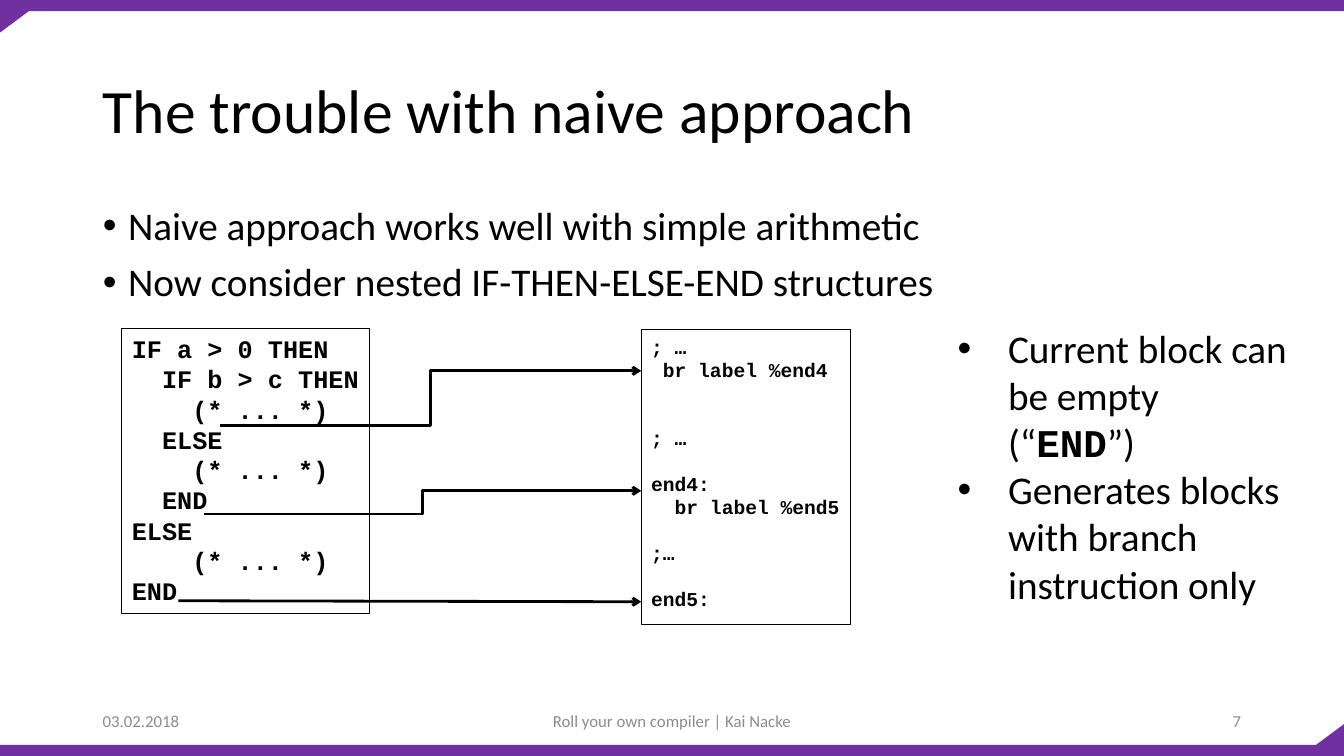
from lxml.etree import SubElement
from pptx import Presentation
from pptx.dml.color import RGBColor
from pptx.enum.shapes import MSO_CONNECTOR as CONN, MSO_SHAPE as SHAPE
from pptx.enum.text import MSO_ANCHOR as ANCHOR, MSO_AUTO_SIZE as AUTOSIZE, PP_ALIGN as ALIGN
from pptx.oxml.ns import qn
from pptx.util import Inches, Pt

TITLE = "The trouble with naive approach"
POINTS = ["Naive approach works well with simple arithmetic",
          "Now consider nested IF-THEN-ELSE-END structures"]
FINDINGS = [[("Current block can be empty (“", False), ("END", True), ("”)", False)],
            [("Generates blocks with branch instruction only", False)]]
FOOTER = ["03.02.2018", "Roll your own compiler | Kai Nacke", "7"]
# Code lines: text, indent in characters, empty lines above
SOURCE = [("IF a > 0 THEN", 0, 0), ("IF b > c THEN", 2, 0), ("(* ... *)", 4, 0),
          ("ELSE", 2, 0), ("(* ... *)", 4, 0), ("END", 2, 0),
          ("ELSE", 0, 0), ("(* ... *)", 4, 0), ("END", 0, 0)]
OUTPUT = [("; …", 0, 0), ("br label %end4", 1, 0), ("; …", 0, 2), ("end4:", 0, 1),
          ("br label %end5", 2, 0), (";…", 0, 1), ("end5:", 0, 1)]

WIDTH, HEIGHT = 13.33, 7.5
MARGIN = 0.92
CONTENT = WIDTH - 2 * MARGIN
BAR = 0.11
WEDGE = (0.54, 0.26)
OUTPUT_LEFT = 6.36
# Arrows: kind, start x, start y, end y; all end at the output box
ARROWS = [(CONN.ELBOW, 2.18, 4.22, 3.68), (CONN.ELBOW, 2.02, 5.1, 4.87),
          (CONN.STRAIGHT, 1.77, 5.96, 5.97)]
PURPLE, BLACK, GREY = "7030A0", "000000", "8C8C8C"
SANS, MONO = "Calibri", "Courier New"
MONO_ADVANCE, MONO_LINE = 0.6, 1.133  # character width and line height per point


def color(value):
    return RGBColor.from_string(value)


def box(*lengths):
    return [Inches(n) for n in lengths]


def write(p, text, size, font=SANS, fill=BLACK, bold=False):
    r = p.add_run()
    r.text = text
    r.font.size, r.font.name, r.font.bold = Pt(size), font, bold
    r.font.color.rgb = color(fill)


def paragraphs(tf, items):
    """Yield each item with its paragraph, starting with the existing one."""
    for i, item in enumerate(items):
        yield (tf.add_paragraph() if i else tf.paragraphs[0]), item


def indent(p, left, first=0.0, bullet=None):
    pPr = p._p.get_or_add_pPr()
    pPr.set("marL", str(Inches(left)))
    pPr.set("indent", str(Inches(first)))
    if bullet:
        SubElement(pPr, qn("a:buFont")).set("typeface", "Arial")
        SubElement(pPr, qn("a:buChar")).set("char", bullet)


def frame(sp, anchor=ANCHOR.TOP):
    tf = sp.text_frame
    tf.word_wrap, tf.auto_size, tf.vertical_anchor = True, AUTOSIZE.NONE, anchor
    return tf


def place(sp, *lengths):
    sp.left, sp.top, sp.width, sp.height = box(*lengths)


def purple_block(slide, *lengths, rotation=0):
    sp = slide.shapes.add_shape(SHAPE.RECTANGLE, *box(*lengths))
    sp.shadow.inherit = False
    sp.fill.solid()
    sp.fill.fore_color.rgb = color(PURPLE)
    sp.line.fill.background()
    sp.rotation = rotation


def code_box(slide, lines, size, *lengths):
    sp = slide.shapes.add_shape(SHAPE.RECTANGLE, *box(*lengths))
    sp.shadow.inherit = False
    sp.fill.background()
    sp.line.color.rgb = color(BLACK)
    sp.line.width = Pt(0.75)
    tf = frame(sp)
    tf.margin_right = 0
    for p, (text, chars, gap) in paragraphs(tf, lines):
        p.alignment = ALIGN.LEFT
        indent(p, chars * size * MONO_ADVANCE / 72)
        p.space_before = Pt(round(gap * size * MONO_LINE, 1))
        write(p, text, size, font=MONO, bold=True)


def arrow(slide, kind, x, y, end_y):
    line = slide.shapes.add_connector(kind, *box(x, y, OUTPUT_LEFT, end_y))
    line.line.color.rgb = color(BLACK)
    line.line.width = Pt(2)
    SubElement(line.line._get_or_add_ln(), qn("a:tailEnd")).set("type", "arrow")
    SubElement(line._element.spPr, qn("a:effectLst"))


def main():
    prs = Presentation()
    prs.slide_width, prs.slide_height = box(WIDTH, HEIGHT)
    slide = prs.slides.add_slide(prs.slide_layouts[1])
    title, body = slide.placeholders

    for top in (0, HEIGHT - BAR):
        purple_block(slide, 0, top, WIDTH, BAR)
    for left, top in ((-0.2, -0.02), (13, 7.26)):
        purple_block(slide, left, top, *WEDGE, rotation=323.4)

    place(title, MARGIN, 0.4, CONTENT, 1.45)
    p = frame(title, ANCHOR.MIDDLE).paragraphs[0]
    p.alignment, p.line_spacing = ALIGN.LEFT, 0.9
    write(p, TITLE, 44)

    place(body, MARGIN, 2, 8.92, 4.76)
    for p, text in paragraphs(frame(body), POINTS):
        p.line_spacing, p.space_before = 0.9, Pt(10)
        indent(p, 0.25, -0.25, "•")
        write(p, text, 28)

    columns = ((MARGIN, 3, ALIGN.LEFT), ((WIDTH - 4.5) / 2, 4.5, ALIGN.CENTER),
               (WIDTH - MARGIN - 3, 3, ALIGN.RIGHT))
    for text, (left, width, align) in zip(FOOTER, columns):
        sp = slide.shapes.add_textbox(*box(left, 6.95, width, 0.4))
        p = frame(sp, ANCHOR.MIDDLE).paragraphs[0]
        p.alignment = align
        write(p, text, 12, fill=GREY)

    code_box(slide, SOURCE, 18, 1.21, 3.26, 2.46, 2.83)
    code_box(slide, OUTPUT, 14, OUTPUT_LEFT, 3.27, 2.08, 2.93)
    for spec_of_arrow in ARROWS:
        arrow(slide, *spec_of_arrow)

    findings = slide.shapes.add_textbox(*box(9.4, 3.17, 3.53, 2.93))
    for p, runs in paragraphs(frame(findings), FINDINGS):
        indent(p, 0.5, -0.5, "•")
        for text, is_code in runs:
            write(p, text, 28, font=MONO if is_code else SANS, bold=is_code)

    prs.save("out.pptx")


if __name__ == "__main__":
    main()
